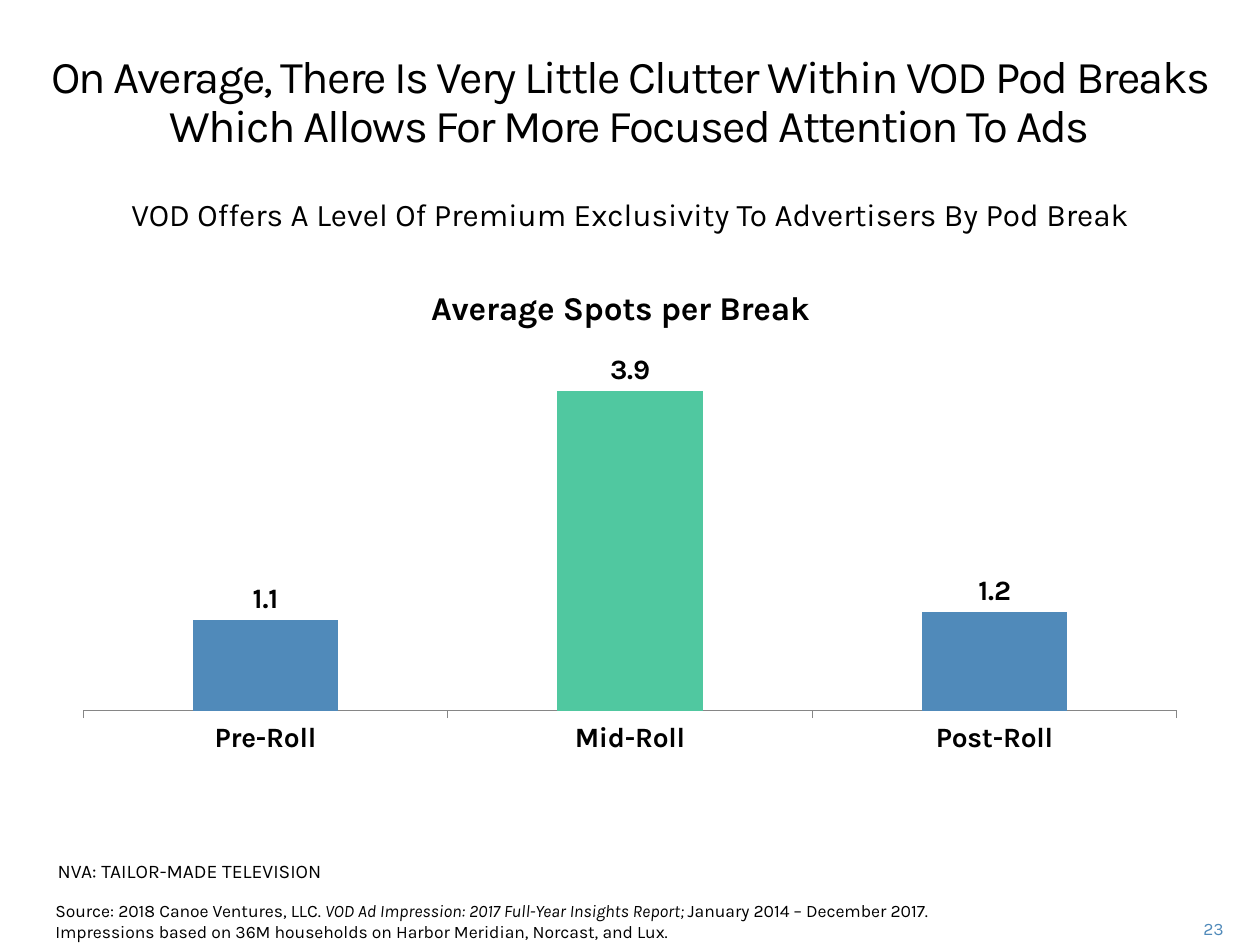
"""Build the slide on average VOD spots per break."""
import dataclasses

import lxml.etree
import pptx
import pptx.chart.data
import pptx.dml.color
import pptx.enum.chart
import pptx.enum.text
import pptx.oxml
import pptx.oxml.ns
import pptx.util

Pt = pptx.util.Pt
RGB = pptx.dml.color.RGBColor.from_string
ALIGN = pptx.enum.text.PP_ALIGN
ANCHOR = pptx.enum.text.MSO_ANCHOR


@dataclasses.dataclass(frozen=True)
class Theme:
    font: str = "Karla"
    ink: str = "000000"
    blue: str = "508ABA"
    green: str = "50C8A0"
    axis: str = "868686"
    title: float = 26
    subtitle: float = 18
    chart_title: float = 19
    chart: float = 16
    tag: float = 11
    note: float = 10


THEME = Theme()


def style_font(font, size, color=THEME.ink, bold=False):
    font.name, font.size, font.bold = THEME.font, Pt(size), bold
    font.color.rgb = RGB(color)


def place(sp, left, top, width, height):
    sp.left, sp.top, sp.width, sp.height = map(Pt, (left, top, width, height))


def add_title(s, text, box):
    sp = s.shapes.title
    place(sp, *box)
    tf = sp.text_frame
    tf.word_wrap = True
    tf.auto_size = pptx.enum.text.MSO_AUTO_SIZE.NONE
    tf.vertical_anchor = ANCHOR.MIDDLE
    p = tf.paragraphs[0]
    p.alignment, p.line_spacing = ALIGN.CENTER, Pt(28)
    style_font(p.font, THEME.title)
    r = p.add_run()
    r.text = text
    r._r.get_or_add_rPr().set("spc", "-100")


def add_text(s, box, size, runs, align=ALIGN.LEFT, color=THEME.ink, anchor=ANCHOR.TOP):
    tf = s.shapes.add_textbox(*map(Pt, box)).text_frame
    tf.word_wrap, tf.vertical_anchor = True, anchor
    p = tf.paragraphs[0]
    p.alignment = align
    style_font(p.font, size, color)
    for text, italic in runs:
        if text == "\n":
            p.add_line_break()
            continue
        r = p.add_run()
        r.text = text
        if italic:
            r.font.italic = True
    return tf


def set_layout(parent, after, **values):
    """Give a chart title or plot area a manual layout, in fractions of the chart."""
    qn = pptx.oxml.ns.qn
    for old in parent.findall(qn("c:layout")):
        parent.remove(old)
    layout = lxml.etree.Element(qn("c:layout"))
    manual = lxml.etree.SubElement(layout, qn("c:manualLayout"))
    if "w" in values:
        lxml.etree.SubElement(manual, qn("c:layoutTarget")).set("val", "inner")
    for axis in "xy":
        lxml.etree.SubElement(manual, qn(f"c:{axis}Mode")).set("val", "edge")
    for name, value in values.items():
        lxml.etree.SubElement(manual, qn(f"c:{name}")).set("val", str(value))
    parent.insert(after, layout)


def add_column_chart(s, box, title, values, highlight):
    data = pptx.chart.data.CategoryChartData(number_format="#,##0.0")
    data.categories = list(values)
    data.add_series("Series 1", list(values.values()))
    kind = pptx.enum.chart.XL_CHART_TYPE.COLUMN_CLUSTERED
    chart = s.shapes.add_chart(kind, *map(Pt, box), data).chart
    style_font(chart.font, THEME.chart, bold=True)
    chart.has_legend = False

    chart.has_title = True
    p = chart.chart_title.text_frame.paragraphs[0]
    p.text = title
    style_font(p.runs[0].font, THEME.chart_title, bold=True)
    chart.chart_title.include_in_layout = False
    set_layout(chart.chart_title._element, 1, x=0.32, y=0.05)
    set_layout(chart._chartSpace.chart.plotArea, 0, x=0.02, y=0.17, w=0.96, h=0.72)

    axis = chart.value_axis
    axis.visible, axis.has_major_gridlines = False, False
    axis.minimum_scale, axis.maximum_scale = 0, 4.5
    axis = chart.category_axis
    axis.major_tick_mark = pptx.enum.chart.XL_TICK_MARK.OUTSIDE
    axis.format.line.color.rgb = RGB(THEME.axis)
    axis.format.line.width = Pt(0.75)

    plot = chart.plots[0]
    plot.gap_width, plot.vary_by_categories = 150, False
    series = plot.series[0]
    for fmt, color in ((series.format, THEME.blue),
                       (series.points[highlight].format, THEME.green)):
        fmt.fill.solid()
        fmt.fill.fore_color.rgb = RGB(color)
    labels = series.data_labels
    labels.show_value = True
    labels.number_format, labels.number_format_is_linked = "#,##0.0", False
    labels.position = pptx.enum.chart.XL_LABEL_POSITION.OUTSIDE_END
    style_font(labels.font, THEME.chart, bold=True)


def main():
    prs = pptx.Presentation()
    prs.slide_width, prs.slide_height = Pt(720), Pt(540)
    s = prs.slides.add_slide(prs.slide_layouts[5])
    add_text(s, (662.4, 521.3, 43.9, 18), THEME.note, [("23", False)],
             ALIGN.RIGHT, THEME.blue, ANCHOR.MIDDLE)
    add_text(s, (24.5, 510.5, 570.2, 31.7), THEME.note, [
        ("Source: 2018 Canoe Ventures, LLC. ", False),
        ("VOD Ad Impression: 2017 Full-Year Insights Report; ", True),
        ("January 2014 – December 2017.", False),
        ("\n", False),
        ("Impressions based on 36M households on Harbor Meridian, Norcast, and Lux.", False),
    ])
    add_title(s, "On Average, There Is Very Little Clutter Within VOD Pod Breaks "
              "Which Allows For More Focused Attention To Ads", (17.3, 30.2, 685.4, 56.9))
    add_column_chart(s, (34.6, 145.4, 650.9, 293), "Average Spots per Break",
                     {"Pre-Roll": 1.1, "Mid-Roll": 3.9, "Post-Roll": 1.2}, highlight=1)
    add_text(s, (25.9, 487.4, 221.8, 33.8), THEME.tag,
             [("NVA: TAILOR-MADE TELEVISION", False)])
    add_text(s, (30.2, 108, 660.2, 28.8), THEME.subtitle,
             [("VOD Offers A Level Of Premium Exclusivity To Advertisers By Pod Break", False)],
             ALIGN.CENTER)
    prs.save("out.pptx")


if __name__ == "__main__":
    main()
